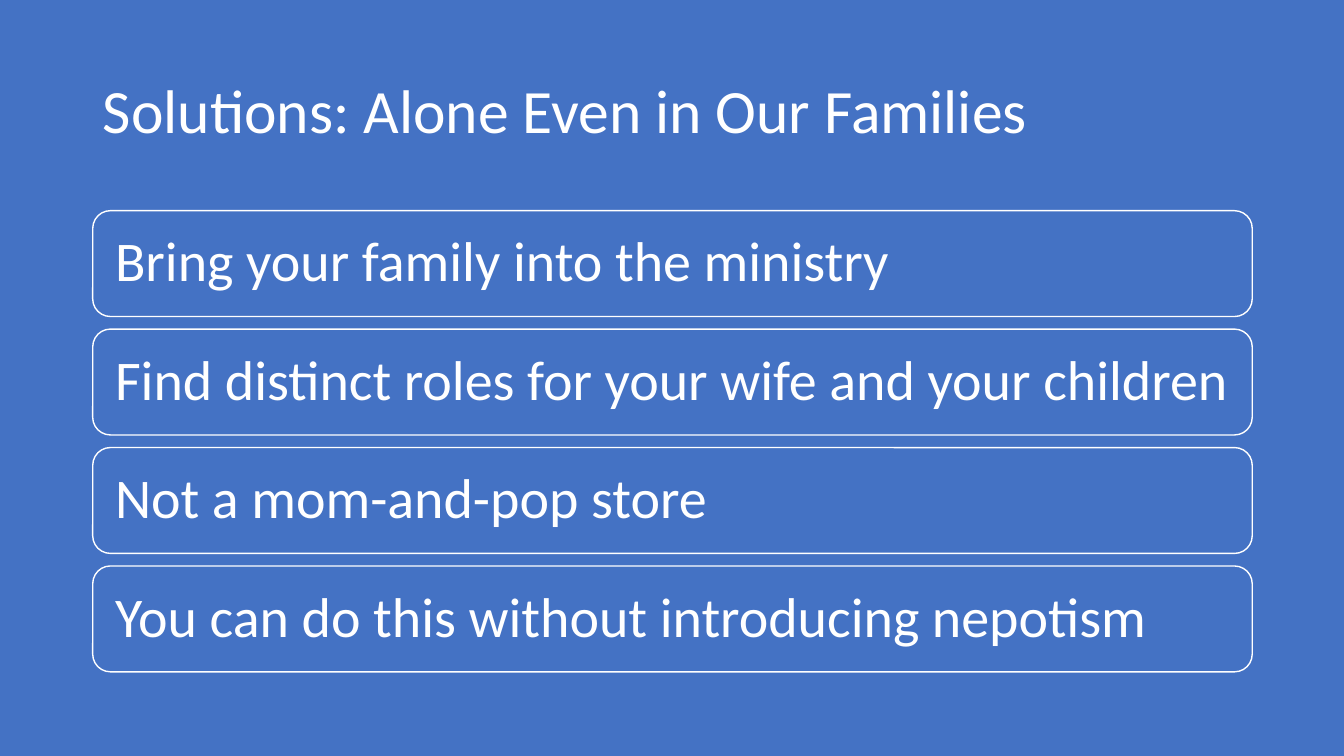
from dataclasses import dataclass

from pptx import Presentation
from pptx import util as u
from pptx.dml.color import RGBColor
from pptx.enum import shapes, text

# Content
TITLE = "Solutions: Alone Even in Our Families"
SOLUTIONS = [
    "Bring your family into the ministry",
    "Find distinct roles for your wife and your children",
    "Not a mom-and-pop store",
    "You can do this without introducing nepotism",
]


@dataclass(frozen=True)
class Theme:
    blue: RGBColor = RGBColor(0x44, 0x72, 0xC4)
    white: RGBColor = RGBColor(0xFF, 0xFF, 0xFF)
    font: str = "Calibri"
    title_size: int = 44
    solution_size: int = 40
    outline: int = 1


THEME = Theme()

# Layout, in inches
LEFT, WIDTH = 0.92, 11.5
TITLE_TOP, TITLE_HEIGHT = 0.4, 1.45
BOX_TOP, BOX_HEIGHT, BOX_PITCH = 2.09, 1.05, 1.175
BOX_INSET = 0.17


def write_text(shape, content, *, size, inset_x=0.1, inset_y=0.05):
    frame = shape.text_frame
    frame.word_wrap = True
    frame.auto_size = text.MSO_AUTO_SIZE.NONE
    frame.vertical_anchor = text.MSO_ANCHOR.MIDDLE
    frame.margin_left = frame.margin_right = u.Inches(inset_x)
    frame.margin_top = frame.margin_bottom = u.Inches(inset_y)
    paragraph = frame.paragraphs[0]
    paragraph.alignment = text.PP_ALIGN.LEFT
    paragraph.line_spacing = 0.9
    run = paragraph.add_run()
    run.text = content
    run.font.name = THEME.font
    run.font.size = u.Pt(size)
    run.font.color.rgb = THEME.white


def add_solution(slide, content, top):
    box = slide.shapes.add_shape(
        shapes.MSO_SHAPE.ROUNDED_RECTANGLE,
        u.Inches(LEFT), u.Inches(top), u.Inches(WIDTH), u.Inches(BOX_HEIGHT),
    )
    box.shadow.inherit = False
    box.fill.solid()
    box.fill.fore_color.rgb = THEME.blue
    box.line.color.rgb = THEME.white
    box.line.width = u.Pt(THEME.outline)
    write_text(box, content, size=THEME.solution_size,
               inset_x=BOX_INSET, inset_y=BOX_INSET)


def main():
    presentation = Presentation()
    presentation.slide_width = u.Inches(13.33)
    presentation.slide_height = u.Inches(7.5)
    slide = presentation.slides.add_slide(presentation.slide_layouts[5])

    # Background
    slide.background.fill.solid()
    slide.background.fill.fore_color.rgb = THEME.blue

    # Title
    title = slide.shapes.title
    title.left, title.top = u.Inches(LEFT), u.Inches(TITLE_TOP)
    title.width, title.height = u.Inches(WIDTH), u.Inches(TITLE_HEIGHT)
    write_text(title, TITLE, size=THEME.title_size)

    # Stacked solutions
    for row, solution in enumerate(SOLUTIONS):
        add_solution(slide, solution, BOX_TOP + row * BOX_PITCH)

    presentation.save("out.pptx")


if __name__ == "__main__":
    main()
